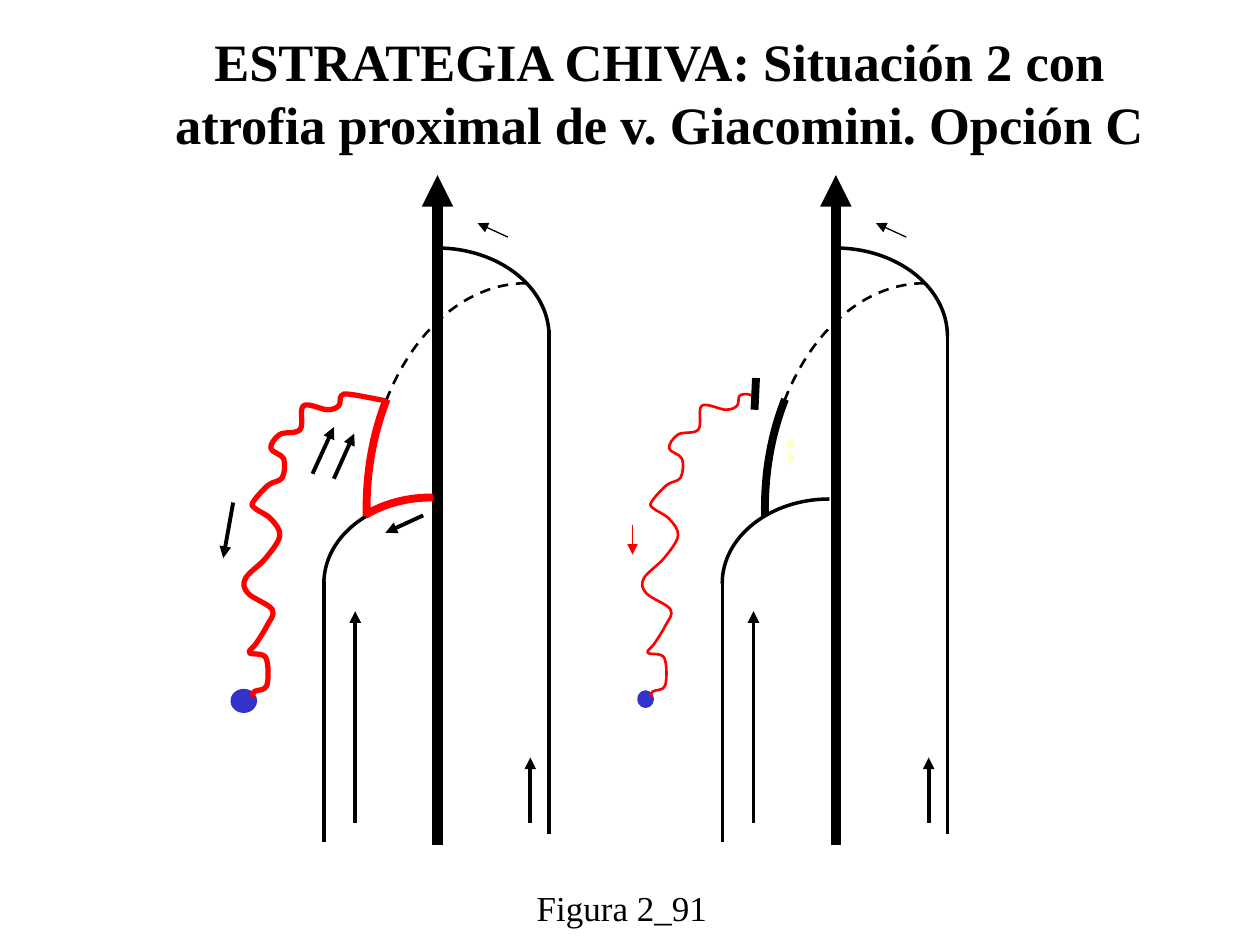
from math import cos, radians, sin, tan

from lxml.etree import SubElement
from pptx import Presentation
from pptx.dml.color import RGBColor
from pptx.enum.dml import MSO_LINE
from pptx.enum.shapes import MSO_CONNECTOR, MSO_SHAPE
from pptx.enum.text import MSO_ANCHOR, MSO_AUTO_SIZE, PP_ALIGN
from pptx.oxml.ns import qn
from pptx.util import Cm, Pt

BLACK, RED, BLUE, CREAM = "000000", "FF0000", "3333CC", "FFFFCC"
LEG_GAP = 8.03  # the right leg repeats the left one at this distance, in cm

# Tortuous tributary, from the saphenous vein down to the perforator
TRIBUTARY = [
    (7.06, 7.95), (6.88, 7.98), (6.83, 8.18), (6.6, 8.26),
    (6.12, 8.18), (6.05, 8.66), (5.64, 8.76), (5.46, 9.04), (5.72, 9.25),
    (5.69, 9.63), (5.41, 9.78), (5.11, 10.11), (5.13, 10.24), (5.46, 10.46),
    (5.64, 10.8), (5.36, 11.25), (4.95, 11.66), (5, 11.96), (5.49, 12.29),
    (5.38, 12.62), (5.16, 12.98), (5.03, 13.16), (5.36, 13.26),
    (5.38, 13.82), (5.13, 13.94), (5.08, 14.05),
]


def color(hex_value):
    return RGBColor.from_string(hex_value)


def arc(center, radii, start, end):
    """Start point and one Bezier segment, angles clockwise from the right."""
    first, last = radians(start), radians(end)
    pull = 4 / 3 * tan((last - first) / 4)

    def place(angle, reach):
        return (center[0] + radii[0] * (cos(angle) - reach * sin(angle)),
                center[1] + radii[1] * (sin(angle) + reach * cos(angle)))

    return place(first, 0), [(place(first, pull), place(last, -pull), place(last, 0))]


def smooth(anchors):
    """Start point and Bezier segments of a smooth curve through the anchors."""
    padded = [anchors[0], *anchors, anchors[-1]]
    segments = []
    for before, start, end, after in zip(padded, padded[1:], padded[2:], padded[3:]):
        leave = tuple(s + (e - b) / 6 for b, s, e in zip(before, start, end))
        arrive = tuple(e - (a - s) / 6 for s, e, a in zip(start, end, after))
        segments.append((leave, arrive, end))
    return anchors[0], segments


def add_vein(slide, curve, shift, hex_value, width, dash=None):
    start, segments = curve
    builder = slide.shapes.build_freeform(Cm(start[0] + shift), Cm(start[1]))
    builder.add_line_segments(
        [(Cm(x + shift), Cm(y)) for *_, (x, y) in segments], close=False)
    vein = builder.convert_to_shape()
    # Bend each straight segment into its Bezier curve
    straights = list(vein._element.iter(qn("a:lnTo")))
    for straight, segment in zip(straights, segments):
        bend = SubElement(straight.getparent(), qn("a:cubicBezTo"))
        for x, y in segment:
            SubElement(bend, qn("a:pt"), x=str(Cm(x + shift) - vein.left),
                       y=str(Cm(y) - vein.top))
        straight.getparent().replace(straight, bend)
    vein.shadow.inherit = False
    vein.fill.background()
    vein.line.color.rgb = color(hex_value)
    vein.line.width = Pt(width)
    if dash:
        vein.line.dash_style = dash


def add_line(slide, start, end, width=2.25, hex_value=BLACK, shift=0, heads=()):
    line = slide.shapes.add_connector(
        MSO_CONNECTOR.STRAIGHT, Cm(start[0] + shift), Cm(start[1]),
        Cm(end[0] + shift), Cm(end[1]))
    line.line.color.rgb = color(hex_value)
    line.line.width = Pt(width)
    for head in heads:
        SubElement(line.get_or_add_ln(), qn(f"a:{head}"), type="triangle")
    SubElement(line._element.spPr, qn("a:effectLst"))


def add_arrow(slide, start, end, width=2.25, hex_value=BLACK, shift=0):
    add_line(slide, start, end, width, hex_value, shift, ["tailEnd"])


def add_perforator(slide, left, top, width, height):
    dot = slide.shapes.add_shape(
        MSO_SHAPE.OVAL, Cm(left), Cm(top), Cm(width), Cm(height))
    dot.shadow.inherit = False
    dot.fill.solid()
    dot.fill.fore_color.rgb = color(BLUE)
    dot.line.color.rgb = color(BLUE)
    dot.line.width = Pt(3)


def add_text(slide, text, box, size, bold=False, align=PP_ALIGN.LEFT,
             anchor=MSO_ANCHOR.TOP, wrap=True):
    frame = slide.shapes.add_textbox(*map(Cm, box)).text_frame
    frame.word_wrap = wrap
    frame.auto_size = MSO_AUTO_SIZE.SHAPE_TO_FIT_TEXT
    frame.vertical_anchor = anchor
    paragraph = frame.paragraphs[0]
    paragraph.text = text
    paragraph.alignment = align
    paragraph.font.name = "Times New Roman"
    paragraph.font.size = Pt(size)
    paragraph.font.bold = bold
    paragraph.font.color.rgb = color(BLACK)


def add_leg(slide, shift):
    """Veins and normal flow that both legs share."""
    # Small saphenous vein
    add_vein(slide, arc((8.69, 11.76), (2.16, 1.7), 180, 270), shift, BLACK, 2)
    add_line(slide, (6.53, 11.71), (6.53, 16.97), 2, shift=shift)
    # Great saphenous vein
    add_vein(slide, arc((8.81, 6.78), (2.26, 1.78), 270, 360), shift, BLACK, 2)
    add_line(slide, (11.07, 6.65), (11.07, 16.81), 2, shift=shift)
    # Atrophied Giacomini vein
    add_vein(slide, arc((10.62, 10.26), (3.23, 4.55), 180, 270), shift, BLACK,
             1.5, MSO_LINE.DASH)
    # Deep vein and upward flow
    add_arrow(slide, (8.82, 17.04), (8.82, 3.53), 6, shift=shift)
    add_arrow(slide, (10.69, 16.59), (10.69, 15.27), shift=shift)
    add_arrow(slide, (7.16, 16.59), (7.16, 12.32), shift=shift)
    add_arrow(slide, (10.24, 4.78), (9.63, 4.5), 0.75, shift=shift)


def add_giacomini_remnant(slide, shift, hex_value):
    add_vein(slide, arc((10.62, 10.24), (3.23, 4.52), 178, 209), shift, hex_value, 4.5)


def main():
    deck = Presentation()
    deck.slide_width, deck.slide_height = Cm(25.4), Cm(19.05)
    slide = deck.slides.add_slide(deck.slide_layouts[6])

    # Title, closed by a line break
    add_text(slide, "ESTRATEGIA CHIVA: Situación 2 con atrofia proximal de v. "
             "Giacomini. Opción C\v", (2.49, 0.46, 21.62, 4.06), 30, True,
             PP_ALIGN.CENTER, MSO_ANCHOR.MIDDLE)

    # Left leg: reflux
    add_leg(slide, 0)
    add_perforator(slide, 4.7, 13.94, 0.43, 0.38)
    add_vein(slide, arc((8.69, 11.71), (2.16, 1.68), 232, 271), 0, RED, 4.5)
    add_giacomini_remnant(slide, 0, RED)
    add_vein(slide, smooth([(7.77, 8.08)] + TRIBUTARY), 0, RED, 3)
    for start, end in [((6.3, 9.55), (6.73, 8.61)), ((6.73, 9.65), (7.14, 8.74)),
                       ((8.53, 10.39), (7.77, 10.74)), ((4.7, 10.13), (4.5, 11.25))]:
        add_arrow(slide, start, end)

    # Right leg: tributary disconnected
    add_leg(slide, LEG_GAP)
    add_perforator(slide, 12.9, 13.97, 0.23, 0.25)
    add_giacomini_remnant(slide, LEG_GAP, BLACK)
    add_vein(slide, smooth([(7.2, 8.03)] + TRIBUTARY), LEG_GAP, RED, 1.5)
    add_line(slide, (15.93, 8.81), (15.93, 9.4), 0.5, CREAM,
             heads=["headEnd", "tailEnd"])
    add_arrow(slide, (12.75, 10.59), (12.75, 11.18), 0.75, RED)
    add_line(slide, (15.24, 7.62), (15.21, 8.26), 4.5)

    # Caption
    add_text(slide, "Figura 2_91", (10.57, 17.75, 3.94, 1.09), 20, wrap=False)
    deck.save("out.pptx")


if __name__ == "__main__":
    main()
